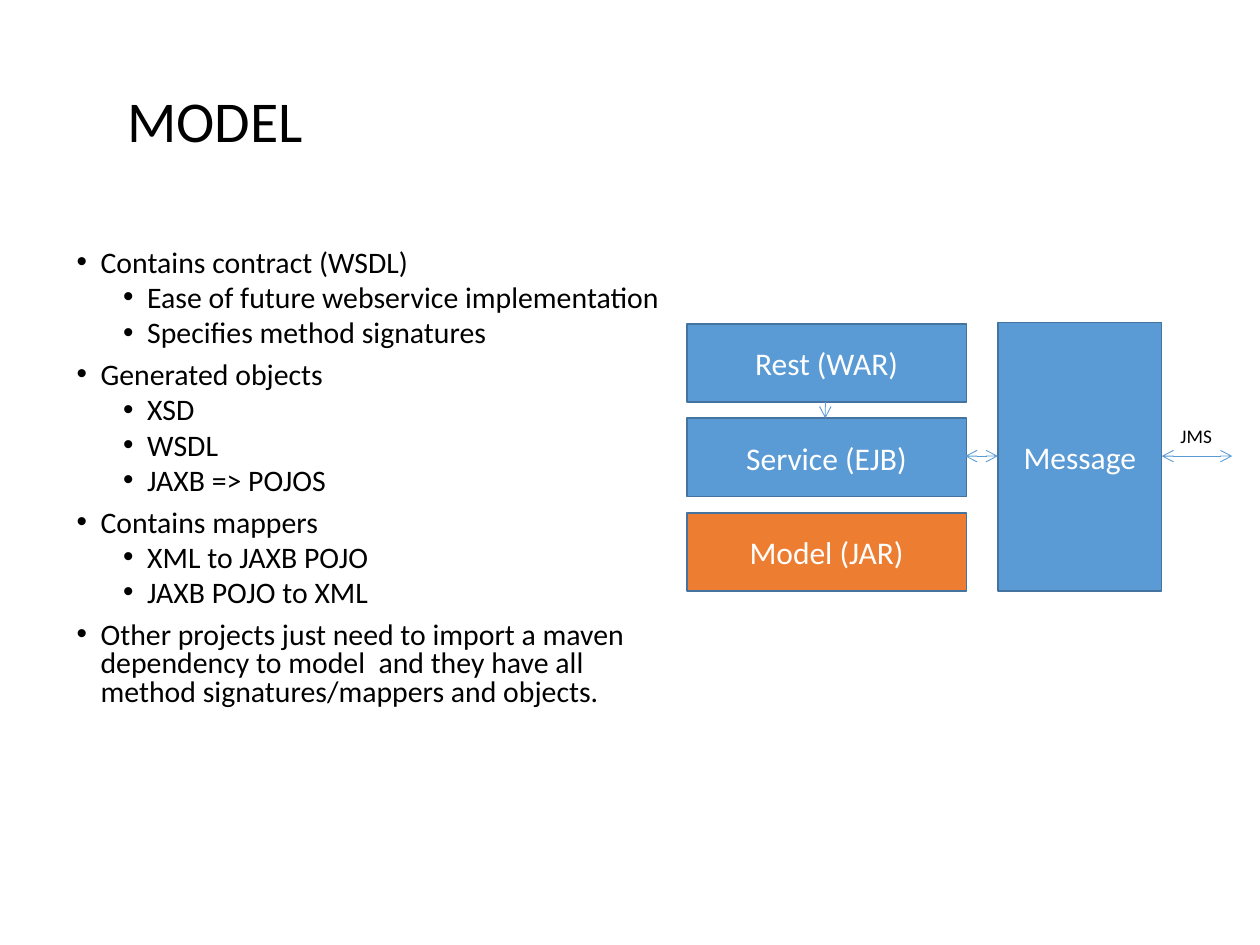
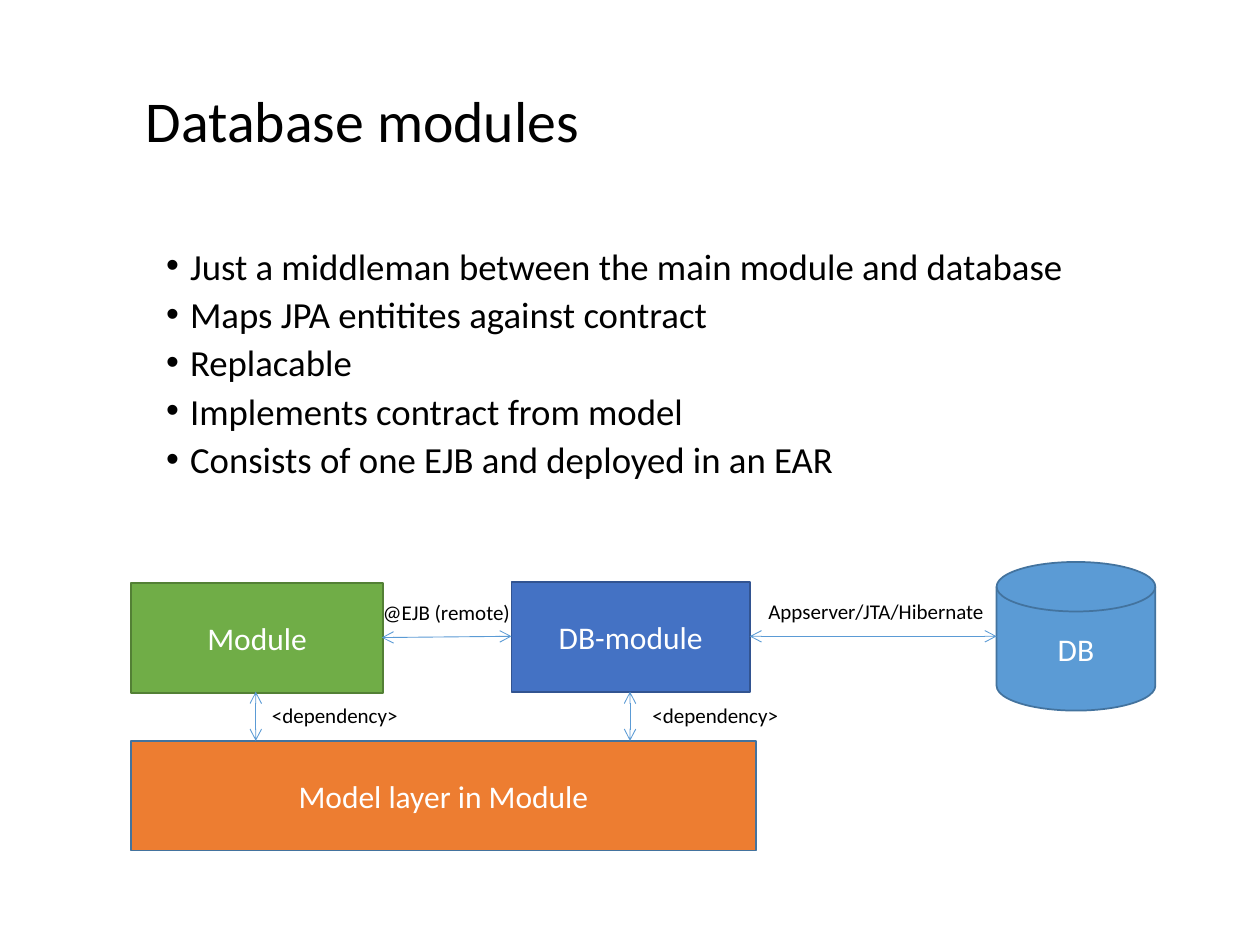
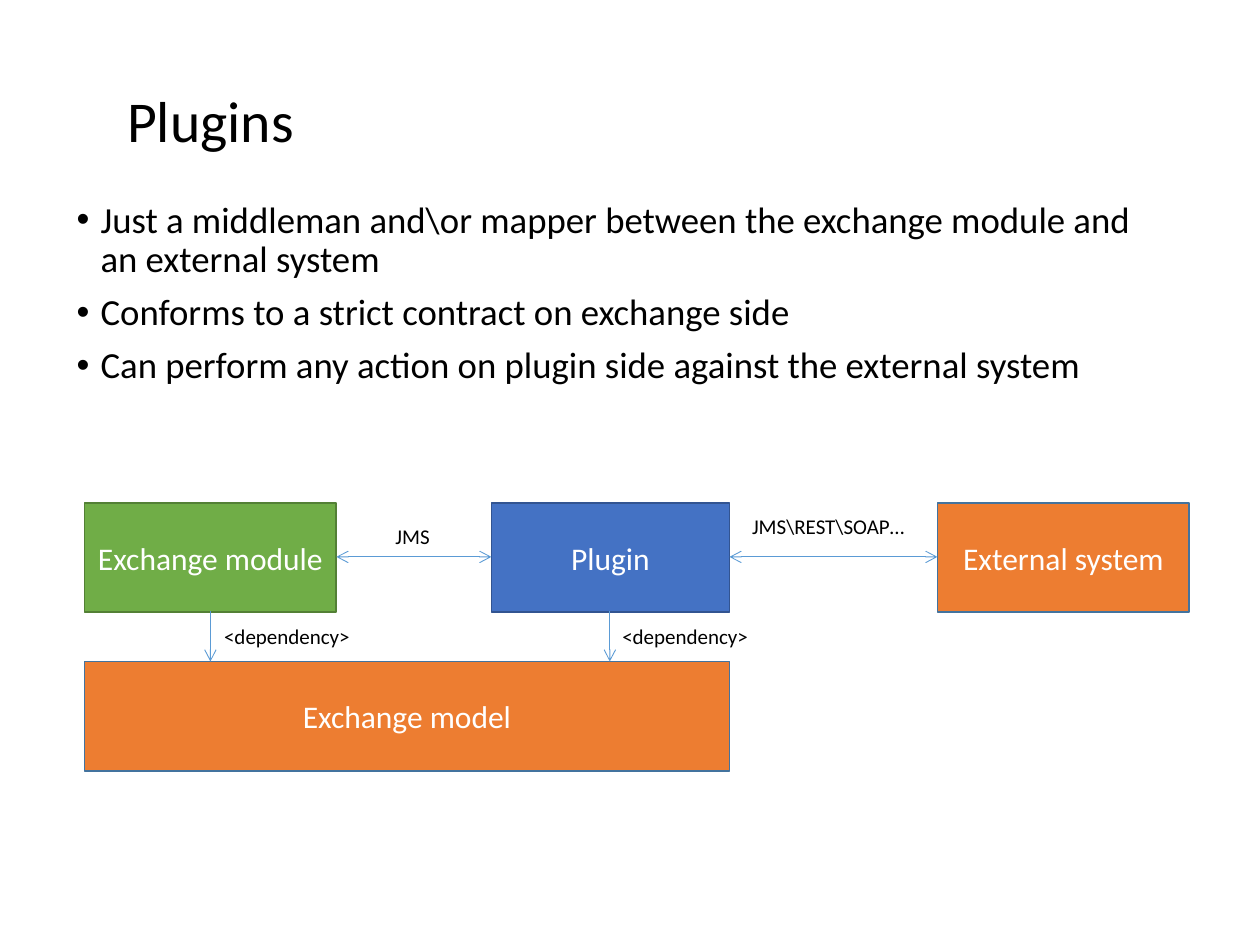
from lxml import etree
from pptx import Presentation
from pptx.dml.color import RGBColor
from pptx.enum.shapes import MSO_CONNECTOR, MSO_SHAPE
from pptx.enum.text import MSO_ANCHOR, PP_ALIGN
from pptx.oxml.ns import qn
from pptx.util import Inches, Pt

RECTANGLE = MSO_SHAPE.RECTANGLE
DISK = MSO_SHAPE.FLOWCHART_MAGNETIC_DISK
STRAIGHT = MSO_CONNECTOR.STRAIGHT
TOP, MIDDLE = MSO_ANCHOR.TOP, MSO_ANCHOR.MIDDLE
LEFT, CENTER = PP_ALIGN.LEFT, PP_ALIGN.CENTER

FONT = "Calibri"
BLACK, WHITE = "000000", "FFFFFF"
BLUE = ("5B9BD5", "43739E")
ORANGE = ("ED7D31", "43739E")
INDIGO = ("4472C4", "325491")
GREEN = ("70AD47", "538035")
BAR_HEIGHT = 0.87

MODEL_POINTS = [
    ("Contains contract (WSDL)", 0),
    ("Ease of future webservice implementation", 1),
    ("Specifies method signatures", 1),
    ("Generated objects", 0),
    ("XSD", 1),
    ("WSDL", 1),
    ("JAXB => POJOS", 1),
    ("Contains mappers", 0),
    ("XML to JAXB POJO", 1),
    ("JAXB POJO to XML", 1),
    ("Other projects just need to import a maven dependency to model  and "
     "they have all method signatures/mappers and objects.", 0),
]
DATABASE_POINTS = [
    ("Just a middleman between the main module and database", 0),
    ("Maps JPA entitites against contract", 0),
    ("Replacable", 0),
    ("Implements contract from model", 0),
    ("Consists of one EJB and deployed in an EAR", 0),
]
PLUGIN_POINTS = [
    ("Just a middleman and\\or mapper between the exchange module and "
     "an external system", 0),
    ("Conforms to a strict contract on exchange side", 0),
    ("Can perform any action on plugin side against the external system", 0),
]


def color(value):
    """Turn a hex string into a colour."""
    return RGBColor.from_string(value)


def write(para, text, size=18, ink=BLACK, align=LEFT, spacing=1.0, before=0):
    """Write text into a paragraph with its format."""
    para.alignment = align
    para.line_spacing = spacing
    para.space_before = Pt(before)
    span = para.add_run()
    span.text = text
    span.font.name = FONT
    span.font.size = Pt(size)
    span.font.color.rgb = color(ink)


def add_bullet(para, level):
    """Give a paragraph a hanging bullet at its level."""
    para.level = level
    props = para._p.get_or_add_pPr()
    props.set("marL", str(Inches(0.19 + 0.37 * level)))
    props.set("indent", str(-Inches(0.19)))
    etree.SubElement(props, qn("a:buFont")).set("typeface", "Arial")
    etree.SubElement(props, qn("a:buChar")).set("char", "•")


def add_frame(page, left, top, width, height, wrap=True, anchor=TOP):
    """Add an empty text box and return its text frame."""
    box = page.shapes.add_textbox(Inches(left), Inches(top),
                                  Inches(width), Inches(height))
    frame = box.text_frame
    frame.word_wrap = wrap
    frame.vertical_anchor = anchor
    return frame


def add_title(page, text, left=0.91):
    """Add the slide title."""
    frame = add_frame(page, left, 0.36, 6.55, 1.25, anchor=MIDDLE)
    write(frame.paragraphs[0], text, size=33, spacing=0.9)


def add_points(page, points, left, top, width, height, size=21, spacing=0.8):
    """Add a bulleted list of (text, level) points."""
    frame = add_frame(page, left, top, width, height)
    for index, (text, level) in enumerate(points):
        para = frame.add_paragraph() if index else frame.paragraphs[0]
        write(para, text, size=size, spacing=spacing,
              before=3.8 if level else 7.5)
        add_bullet(para, level)


def add_label(page, text, left, top, width, size=12):
    """Add a small one-line label."""
    frame = add_frame(page, left, top, width, 0.3, wrap=False)
    write(frame.paragraphs[0], text, size=size)


def add_block(page, text, style, left, top, width, height=BAR_HEIGHT,
              kind=RECTANGLE):
    """Add a filled, outlined diagram block with centred text."""
    block = page.shapes.add_shape(kind, Inches(left), Inches(top),
                                  Inches(width), Inches(height))
    fill, line = style
    block.shadow.inherit = False
    block.fill.solid()
    block.fill.fore_color.rgb = color(fill)
    block.line.color.rgb = color(line)
    block.line.width = Pt(1)
    block.text_frame.word_wrap = True
    block.text_frame.vertical_anchor = MIDDLE
    write(block.text_frame.paragraphs[0], text, ink=WHITE, align=CENTER)


def add_arrow(page, start, end, both=True):
    """Add a thin arrow from start to end, two-headed by default."""
    arrow = page.shapes.add_connector(STRAIGHT, *map(Inches, start + end))
    arrow.line.color.rgb = color(BLUE[0])
    arrow.line.width = Pt(0.5)
    outline = arrow.line._get_or_add_ln()
    for tag in ("a:headEnd", "a:tailEnd") if both else ("a:tailEnd",):
        etree.SubElement(outline, qn(tag)).set("type", "arrow")
    etree.SubElement(arrow._element.spPr, qn("a:effectLst"))


def build_model(page):
    """Build the slide on the model layer."""
    add_title(page, "MODEL")
    add_points(page, MODEL_POINTS, 0.51, 1.94, 4.88, 3.94, size=17)
    layers = [("Rest (WAR)", BLUE), ("Service (EJB)", BLUE),
              ("Model (JAR)", ORANGE)]
    for row, (name, style) in enumerate(layers):
        add_block(page, name, style, 5.45, 2.57 + 0.75 * row, 2.22, 0.62)
    add_block(page, "Message", BLUE, 7.92, 2.56, 1.3, 2.13)
    add_arrow(page, (6.55, 3.19), (6.55, 3.32), both=False)
    add_arrow(page, (7.66, 3.62), (7.92, 3.62))
    add_arrow(page, (9.22, 3.62), (9.78, 3.62))
    add_label(page, "JMS", 9.27, 3.32, 0.47, size=11)


def build_database(page):
    """Build the slide on database modules."""
    add_title(page, "Database modules", left=1.06)
    add_points(page, DATABASE_POINTS, 1.22, 1.95, 7.72, 2.11)
    add_block(page, "Model layer in Module", ORANGE, 1.04, 5.88, 4.96)
    add_block(page, "Module", GREEN, 1.04, 4.63, 2)
    add_block(page, "DB-module", INDIGO, 4.06, 4.62, 1.89)
    add_block(page, "DB", BLUE, 7.91, 4.46, 1.26, 1.18, kind=DISK)
    add_arrow(page, (3.03, 5.06), (4.06, 5.05))
    add_arrow(page, (7.91, 5.05), (5.95, 5.05))
    add_label(page, "@EJB (remote)", 2.94, 4.71, 1.22)
    add_label(page, "Appserver/JTA/Hibernate", 6, 4.7, 2.27)
    for center, label_left in ((2.03, 2.06), (5, 5.08)):
        add_arrow(page, (center, 5.49), (center, 5.88))
        add_label(page, "<dependency>", label_left, 5.53, 1.21)


def build_plugins(page):
    """Build the slide on plugins."""
    add_title(page, "Plugins")
    add_points(page, PLUGIN_POINTS, 0.51, 1.55, 8.82, 2.11, spacing=0.9)
    add_block(page, "Exchange module", GREEN, 0.67, 3.99, 2)
    add_block(page, "Plugin", INDIGO, 3.9, 3.99, 1.89)
    add_block(page, "External system", ORANGE, 7.44, 3.99, 2)
    add_block(page, "Exchange model", ORANGE, 0.67, 5.25, 5.12)
    add_arrow(page, (2.67, 4.42), (3.9, 4.42))
    add_arrow(page, (5.79, 4.42), (7.44, 4.42))
    add_label(page, "JMS", 3.04, 4.11, 0.49)
    add_label(page, "JMS\\REST\\SOAP…", 5.87, 4.03, 1.65)
    for center, label_left in ((1.67, 1.68), (4.84, 4.84)):
        add_arrow(page, (center, 4.85), (center, 5.25), both=False)
        add_label(page, "<dependency>", label_left, 4.9, 1.21)


def main():
    """Build the deck and save it."""
    deck = Presentation()
    deck.slide_width, deck.slide_height = Inches(10), Inches(7.5)
    blank = deck.slide_layouts[6]
    for build in (build_model, build_database, build_plugins):
        build(deck.slides.add_slide(blank))
    deck.save("out.pptx")


if __name__ == "__main__":
    main()
